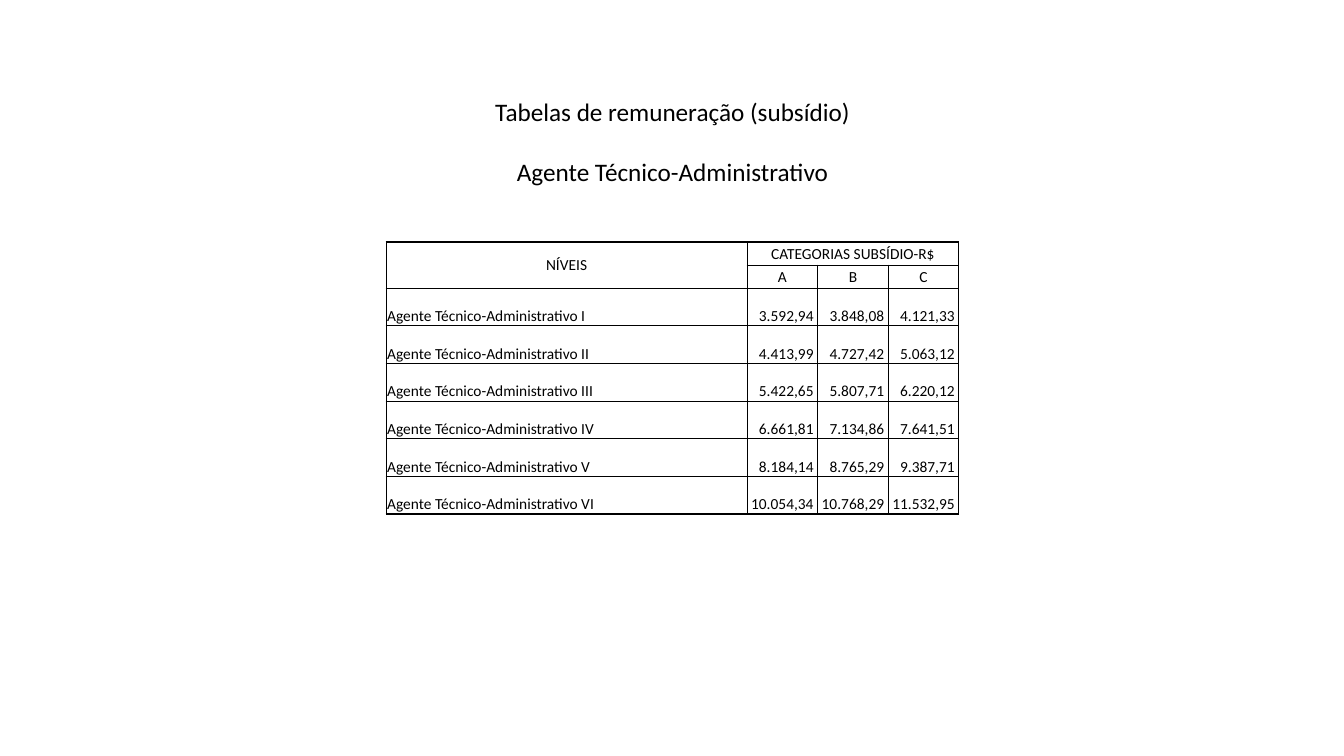
from lxml.etree import SubElement
from pptx import Presentation
from pptx.dml.color import RGBColor
from pptx.enum.text import MSO_ANCHOR, MSO_AUTO_SIZE, PP_ALIGN
from pptx.oxml.ns import qn
from pptx.util import Inches, Pt

TITLE = ["Tabelas de remuneração (subsídio)", "Agente Técnico-Administrativo"]
LEVELS_HEADER = "NÍVEIS"
GROUP_HEADER = "CATEGORIAS SUBSÍDIO-R$"
CATEGORIES = ["A", "B", "C"]
SALARIES = [
    ("Agente Técnico-Administrativo I", "3.592,94", "3.848,08", "4.121,33"),
    ("Agente Técnico-Administrativo II", "4.413,99", "4.727,42", "5.063,12"),
    ("Agente Técnico-Administrativo III", "5.422,65", "5.807,71", "6.220,12"),
    ("Agente Técnico-Administrativo IV", "6.661,81", "7.134,86", "7.641,51"),
    ("Agente Técnico-Administrativo V", "8.184,14", "8.765,29", "9.387,71"),
    ("Agente Técnico-Administrativo VI", "10.054,34", "10.768,29", "11.532,95"),
]
COLORS = {"text": "000000", "border": "000000"}
FONT = "Calibri"
LEVEL_W, CATEGORY_W = 3.58, 0.7
TABLE_H, HEADER_H, HEADER_ROWS = 2.7, 0.23, 2


def add_text(p, text, size, align):
    p.alignment = align
    r = p.add_run()
    r.text = text
    r.font.name = FONT
    r.font.size = Pt(size)
    r.font.bold = False
    r.font.color.rgb = RGBColor.from_string(COLORS["text"])


def set_borders(cell):
    tc_pr = cell._tc.get_or_add_tcPr()
    for i, side in enumerate(("lnL", "lnR", "lnT", "lnB")):
        ln = SubElement(tc_pr, qn(f"a:{side}"), w=str(Pt(1)))
        fill = SubElement(ln, qn("a:solidFill"))
        SubElement(fill, qn("a:srgbClr"), val=COLORS["border"])
        tc_pr.insert(i, ln)


def fill_cell(cell, text, align, anchor, right=0.01):
    cell.margin_left, cell.margin_right = Inches(0.01), Inches(right)
    cell.margin_top, cell.margin_bottom = Inches(0.01), 0
    cell.vertical_anchor = anchor
    add_text(cell.text_frame.paragraphs[0], text, 11, align)


def add_title(s):
    title = s.shapes.title
    title.left, title.top = Inches(1.99), Inches(0.91)
    title.width, title.height = Inches(9.36), Inches(1.01)
    tf = title.text_frame
    tf.word_wrap = True
    tf.auto_size = MSO_AUTO_SIZE.NONE
    tf.vertical_anchor = MSO_ANCHOR.TOP
    for i, line in enumerate(TITLE):
        p = tf.add_paragraph() if i else tf.paragraphs[0]
        p.space_before = Pt(21 if i else 0)
        add_text(p, line, 18, PP_ALIGN.CENTER)


def add_salary_table(s):
    rows, cols = HEADER_ROWS + len(SALARIES), 1 + len(CATEGORIES)
    width = LEVEL_W + CATEGORY_W * len(CATEGORIES)
    table = s.shapes.add_table(rows, cols, Inches(3.83), Inches(2.4),
                               Inches(width), Inches(TABLE_H)).table
    table.first_row = table.horz_banding = False
    for i, col in enumerate(table.columns):
        col.width = Inches(CATEGORY_W if i else LEVEL_W)
    body_h = (TABLE_H - HEADER_ROWS * HEADER_H) / len(SALARIES)
    for i, row in enumerate(table.rows):
        row.height = Inches(HEADER_H if i < HEADER_ROWS else body_h)
    for cell in table.iter_cells():
        cell.fill.background()
        set_borders(cell)

    table.cell(0, 0).merge(table.cell(1, 0))
    table.cell(0, 1).merge(table.cell(0, cols - 1))
    headers = [(0, 0, LEVELS_HEADER), (0, 1, GROUP_HEADER)]
    headers += [(1, i, name) for i, name in enumerate(CATEGORIES, 1)]
    for row, col, text in headers:
        fill_cell(table.cell(row, col), text, PP_ALIGN.CENTER, MSO_ANCHOR.MIDDLE)
    for row, (level, *values) in enumerate(SALARIES, HEADER_ROWS):
        fill_cell(table.cell(row, 0), level, PP_ALIGN.LEFT, MSO_ANCHOR.BOTTOM)
        for col, value in enumerate(values, 1):
            fill_cell(table.cell(row, col), value, PP_ALIGN.RIGHT,
                      MSO_ANCHOR.BOTTOM, right=0.04)


def main():
    prs = Presentation()
    prs.slide_width, prs.slide_height = Inches(13.33), Inches(7.5)
    s = prs.slides.add_slide(prs.slide_layouts[5])
    add_title(s)
    add_salary_table(s)
    prs.save("out.pptx")


if __name__ == "__main__":
    main()
